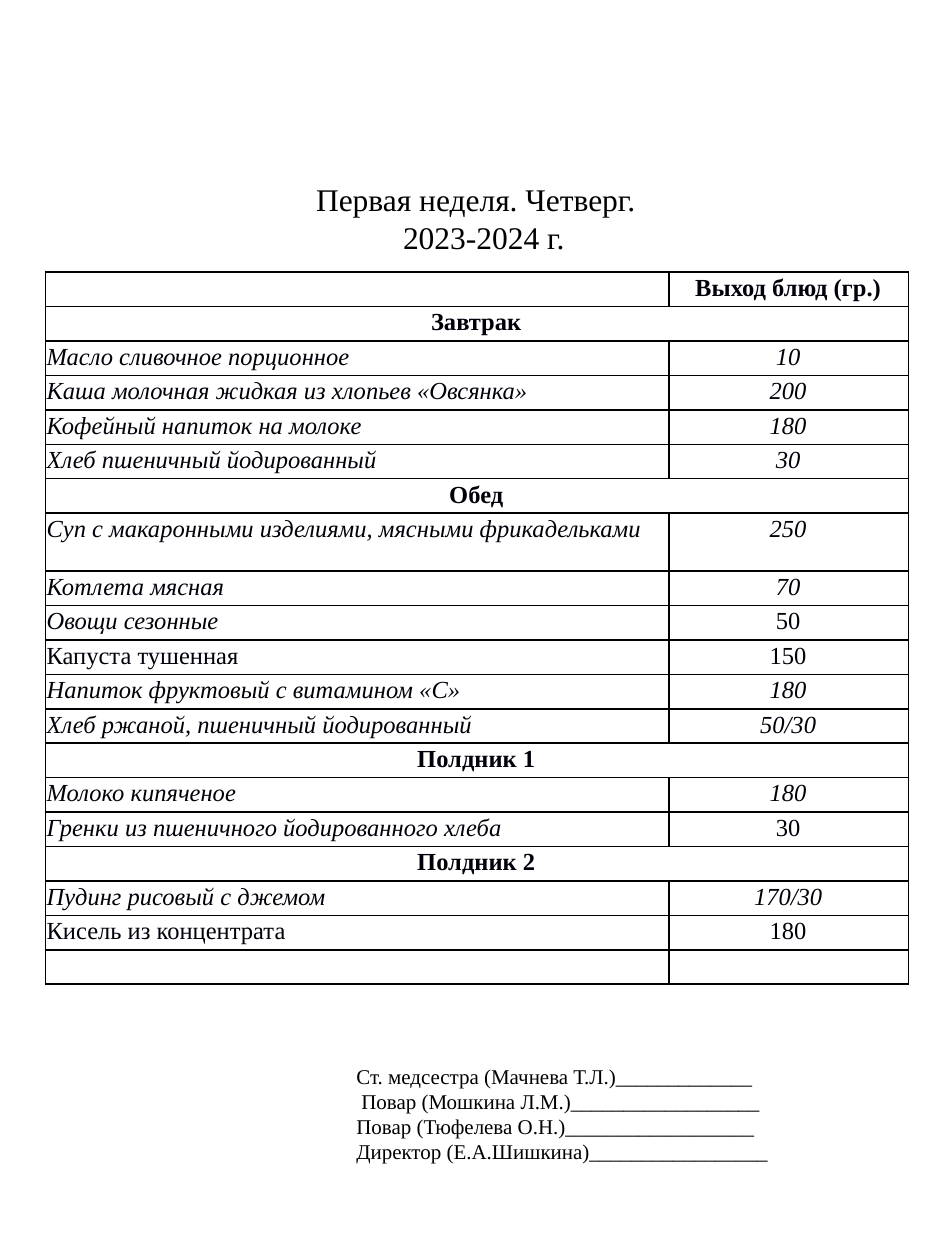
from dataclasses import dataclass

from lxml import etree
from pptx import Presentation
from pptx.dml.color import RGBColor
from pptx.enum.text import MSO_AUTO_SIZE, PP_ALIGN
from pptx.oxml.ns import qn
from pptx.slide import Slide
from pptx.table import Table, _Cell
from pptx.text.text import _Paragraph
from pptx.util import Inches, Length, Pt

LEFT, CENTER = PP_ALIGN.LEFT, PP_ALIGN.CENTER
GROW = MSO_AUTO_SIZE.SHAPE_TO_FIT_TEXT


@dataclass(frozen=True)
class Theme:
    font: str = "Times New Roman"
    ink: str = "000000"
    table_ink: str = "00000A"
    border: str = "000001"
    border_width: Length = Pt(1)
    title_size: Length = Pt(18)
    table_size: Length = Pt(14)
    signature_size: Length = Pt(12)


@dataclass(frozen=True)
class Line:
    text: str
    indent: float = 0


@dataclass(frozen=True)
class Dish:
    name: str
    portion: str
    name_italic: bool = True
    portion_italic: bool = True
    tall: bool = False


@dataclass(frozen=True)
class Meal:
    name: str
    dishes: tuple[Dish, ...]


THEME = Theme()

TITLE = (Line("Первая неделя. Четверг."), Line("2023-2024 г.", indent=0.69))

MEALS = (
    Meal("Завтрак", (
        Dish("Масло сливочное порционное", "10"),
        Dish("Каша молочная жидкая из хлопьев «Овсянка»", "200"),
        Dish("Кофейный напиток на молоке", "180"),
        Dish("Хлеб пшеничный йодированный", "30"),
    )),
    Meal("Обед", (
        Dish("Суп с макаронными изделиями, мясными фрикадельками", "250", tall=True),
        Dish("Котлета мясная", "70"),
        Dish("Овощи сезонные", "50", portion_italic=False),
        Dish("Капуста тушенная", "150", name_italic=False, portion_italic=False),
        Dish("Напиток фруктовый с витамином «С»", "180"),
        Dish("Хлеб ржаной, пшеничный йодированный", "50/30"),
    )),
    Meal("Полдник 1", (
        Dish("Молоко кипяченое", "180"),
        Dish("Гренки из пшеничного йодированного хлеба", "30", portion_italic=False),
    )),
    Meal("Полдник 2", (
        Dish("Пудинг рисовый с джемом", "170/30"),
        Dish("Кисель из концентрата", "180", name_italic=False, portion_italic=False),
    )),
)

SIGNATURES = (
    Line("Ст. медсестра (Мачнева Т.Л.)_____________"),
    Line("Повар (Мошкина Л.М.)__________________", indent=0.04),
    Line("Повар (Тюфелева О.Н.)__________________"),
    Line("Директор (Е.А.Шишкина)_________________"),
)


def style(para: _Paragraph, size: Length, color: str,
          bold: bool = False, italic: bool = False) -> None:
    font = para.font
    font.name, font.size = THEME.font, size
    font.bold, font.italic = bold, italic
    font.color.rgb = RGBColor.from_string(color)


def add_lines(slide: Slide, lines: tuple[Line, ...], size: Length,
              left: float, top: float, width: float, height: float) -> None:
    box = slide.shapes.add_textbox(
        Inches(left), Inches(top), Inches(width), Inches(height))
    frame = box.text_frame
    frame.word_wrap = True
    frame.auto_size = GROW
    for index, line in enumerate(lines):
        para = frame.add_paragraph() if index else frame.paragraphs[0]
        para.text = line.text
        if line.indent:
            para._p.get_or_add_pPr().set("marL", str(Inches(line.indent)))
        style(para, size, THEME.ink)


def frame_cell(cell: _Cell) -> None:
    """Draw the four borders, then clear the fill."""
    properties = cell._tc.get_or_add_tcPr()
    for side in ("a:lnL", "a:lnR", "a:lnT", "a:lnB"):
        line = etree.SubElement(properties, qn(side), w=str(THEME.border_width))
        fill = etree.SubElement(line, qn("a:solidFill"))
        etree.SubElement(fill, qn("a:srgbClr"), val=THEME.border)
    cell.fill.background()


def write_cell(cell: _Cell, text: str, align: PP_ALIGN = CENTER,
               bold: bool = False, italic: bool = False) -> None:
    para = cell.text_frame.paragraphs[0]
    para.text = text
    para.alignment = align
    style(para, THEME.table_size, THEME.table_ink, bold, italic)


def add_menu(slide: Slide, meals: tuple[Meal, ...]) -> Table:
    # One heading row, one row per meal and dish, one spare row
    row_count = 2 + sum(1 + len(meal.dishes) for meal in meals)
    height, tall_height = 5.53, 0.46
    row_height = (height - tall_height) / (row_count - 1)
    table = slide.shapes.add_table(
        row_count, 2, Inches(0.36), Inches(2.16), Inches(6.85), Inches(height)).table
    table.first_row = table.horz_banding = False
    for column, width in zip(table.columns, (4.95, 1.9)):
        column.width = Inches(width)
    for row in table.rows:
        row.height = Inches(row_height)
        for cell in row.cells:
            cell.margin_left = Inches(0.01)
            cell.margin_right = cell.margin_top = cell.margin_bottom = Inches(0.02)
            frame_cell(cell)
            write_cell(cell, "")

    # Heading, then each meal with its dishes
    write_cell(table.cell(0, 1), "Выход блюд (гр.)", bold=True)
    row_index = 1
    for meal in meals:
        heading = table.cell(row_index, 0)
        heading.merge(table.cell(row_index, 1))
        write_cell(heading, meal.name, bold=True)
        for row_index, dish in enumerate(meal.dishes, row_index + 1):
            write_cell(table.cell(row_index, 0), dish.name, LEFT, italic=dish.name_italic)
            write_cell(table.cell(row_index, 1), dish.portion, italic=dish.portion_italic)
            if dish.tall:
                table.rows[row_index].height = Inches(tall_height)
        row_index += 1
    return table


def main() -> None:
    deck = Presentation()
    deck.slide_width, deck.slide_height = Inches(7.5), Inches(10)
    page = deck.slides.add_slide(deck.slide_layouts[6])

    # Title, menu table, signatures
    add_lines(page, TITLE, THEME.title_size, 2.41, 1.38, 4.02, 0.71)
    add_menu(page, MEALS)
    add_lines(page, SIGNATURES, THEME.signature_size, 2.73, 8.39, 3.94, 1.21)
    deck.save("out.pptx")


if __name__ == "__main__":
    main()
